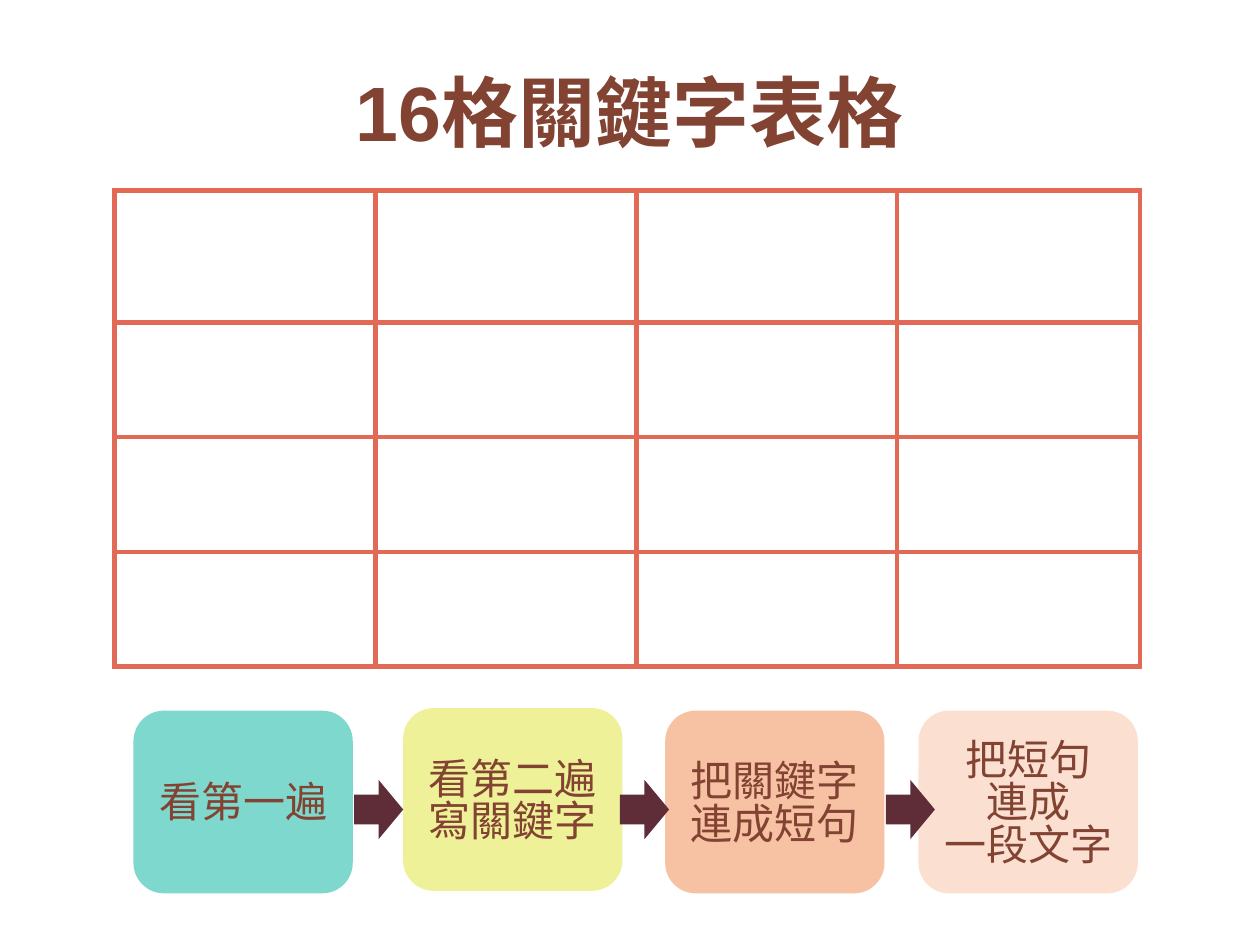
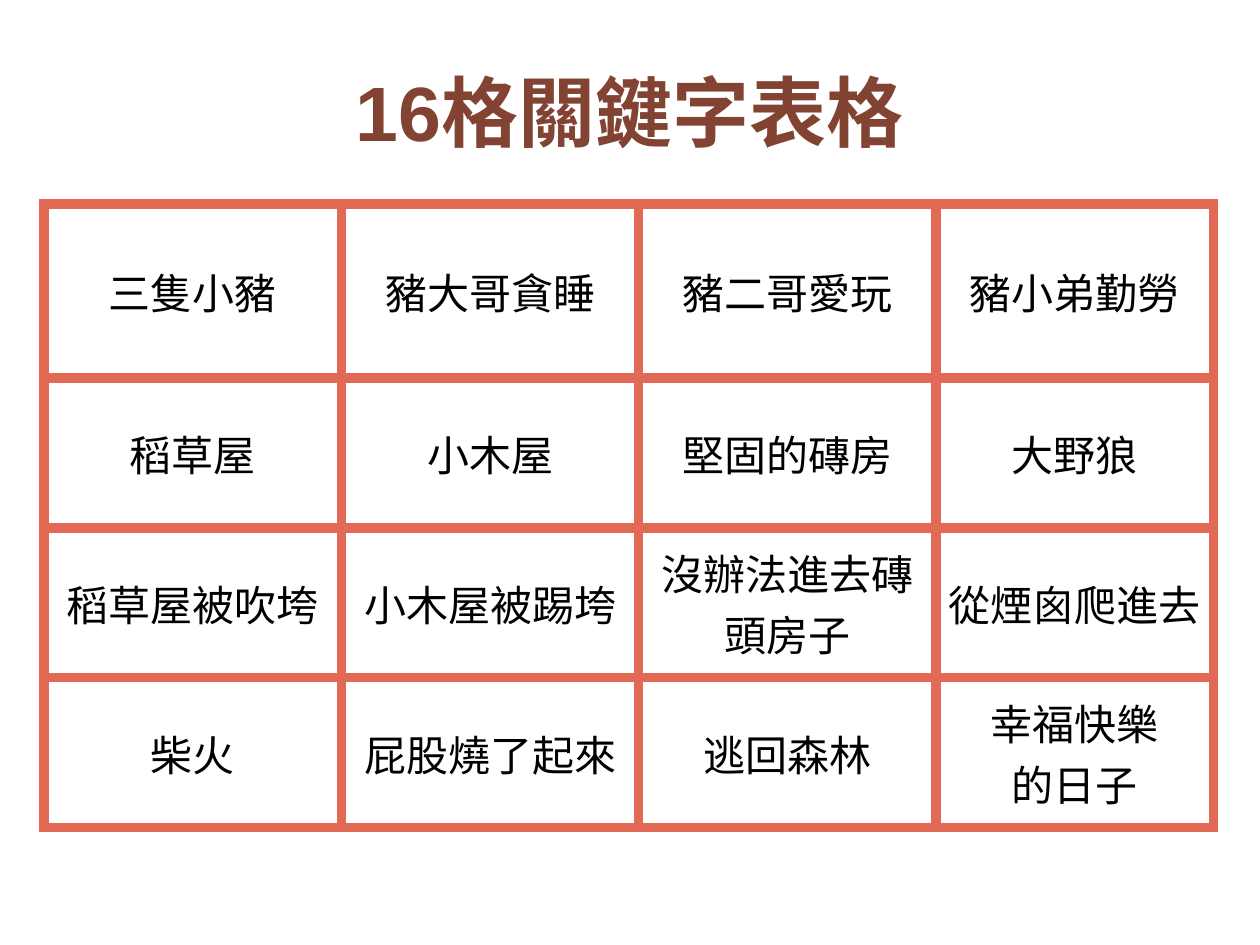
from dataclasses import dataclass

from lxml import etree
from pptx import Presentation
from pptx.dml.color import RGBColor
from pptx.enum import shapes, text
from pptx.oxml import ns
from pptx.util import Inches, Pt


@dataclass(frozen=True)
class Theme:
    font: str = "Arial"
    brown: str = "824332"
    black: str = "000000"
    grid: str = "E16955"
    arrow: str = "5E2D37"
    steps: tuple = ("7ED8CD", "EFF199", "F7C1A4", "FBE0D1")
    title_size: int = 44
    body_size: int = 24


class Deck:
    """Holds the style and the current page."""

    def __init__(self, theme):
        self.theme = theme
        self.deck = Presentation()
        self.deck.slide_width = Inches(10)
        self.deck.slide_height = Inches(7.5)
        self.page = None

    def add_page(self, title):
        self.page = self.deck.slides.add_slide(self.deck.slide_layouts[6])
        box = self.page.shapes.add_textbox(
            Inches(0.5), Inches(0.3), Inches(9), Inches(1.25))
        box.text_frame.vertical_anchor = text.MSO_ANCHOR.MIDDLE
        self.set_words(box.text_frame, title, self.theme.title_size,
                       self.theme.brown, bold=True, spacing=0.9)

    def set_words(self, frame, wording, size, color, bold=False, spacing=1.0):
        frame.text = wording
        frame.word_wrap = True
        for para in frame.paragraphs:
            para.alignment = text.PP_ALIGN.CENTER
            para.line_spacing = spacing
            for span in para.runs:
                span.font.name = self.theme.font
                span.font.size = Pt(size)
                span.font.bold = bold
                span.font.color.rgb = RGBColor.from_string(color)

    def add_shape(self, kind, left, top, width, height, color):
        shape = self.page.shapes.add_shape(
            kind, Inches(left), Inches(top), Inches(width), Inches(height))
        shape.shadow.inherit = False
        shape.fill.solid()
        shape.fill.fore_color.rgb = RGBColor.from_string(color)
        shape.line.fill.background()
        return shape

    def add_step(self, left, top, wording, color):
        box = self.add_shape(shapes.MSO_SHAPE.ROUNDED_RECTANGLE,
                             left, top, 1.74, 1.45, color)
        frame = box.text_frame
        frame.vertical_anchor = text.MSO_ANCHOR.MIDDLE
        frame.margin_top = Inches(0.1)
        self.set_words(frame, wording, self.theme.body_size,
                       self.theme.brown, spacing=0.84)

    def add_arrow(self, left, top):
        self.add_shape(shapes.MSO_SHAPE.RIGHT_ARROW,
                       left, top, 0.39, 0.47, self.theme.arrow)

    def add_grid(self, left, top, widths, heights, border, words=None):
        table = self.page.shapes.add_table(
            len(heights), len(widths), Inches(left), Inches(top),
            Inches(sum(widths)), Inches(sum(heights))).table
        table.first_row = table.horz_banding = False
        for column, width in zip(table.columns, widths):
            column.width = Inches(width)
        for row, height in zip(table.rows, heights):
            row.height = Inches(height)
        for index, cell in enumerate(table.iter_cells()):
            cell.fill.background()
            cell.vertical_anchor = text.MSO_ANCHOR.MIDDLE
            self.add_borders(cell, border)
            if words:
                self.set_words(cell.text_frame, words[index],
                               self.theme.body_size, self.theme.black)

    def add_borders(self, cell, points):
        properties = cell._tc.get_or_add_tcPr()
        for index, side in enumerate(("lnL", "lnR", "lnT", "lnB")):
            line = etree.Element(ns.qn(f"a:{side}"), w=str(Pt(points)))
            fill = etree.SubElement(line, ns.qn("a:solidFill"))
            etree.SubElement(fill, ns.qn("a:srgbClr"), val=self.theme.grid)
            properties.insert(index, line)


TITLE = "16格關鍵字表格"
STEPS = [
    (1.06, 5.64, "看第一遍"),
    (3.2, 5.62, "看第二遍\n寫關鍵字"),
    (5.28, 5.64, "把關鍵字連成短句"),
    (7.29, 5.64, "把短句\n連成\n一段文字"),
]
KEYWORDS = [
    "三隻小豬", "豬大哥貪睡", "豬二哥愛玩", "豬小弟勤勞",
    "稻草屋", "小木屋", "堅固的磚房", "大野狼",
    "稻草屋被吹垮", "小木屋被踢垮", "沒辦法進去磚頭房子", "從煙囪爬進去",
    "柴火", "屁股燒了起來", "逃回森林", "幸福快樂\n的日子",
]


def main():
    theme = Theme()
    show = Deck(theme)

    # Empty grid with the four working steps
    show.add_page(TITLE)
    show.add_grid(0.91, 1.51, [2.07] * 3 + [1.93], [1.05] + [0.91] * 3, 3)
    for (left, top, wording), color in zip(STEPS, theme.steps):
        show.add_step(left, top, wording, color)
    for gap in range(3):
        show.add_arrow(2.81 + gap * 2.11, 6.19)

    # Grid filled with the story's keywords
    show.add_page(TITLE)
    show.add_grid(0.35, 1.62, [2.36] * 3 + [2.2], [1.38] + [1.19] * 3, 6,
                  KEYWORDS)

    show.deck.save("out.pptx")


if __name__ == "__main__":
    main()
